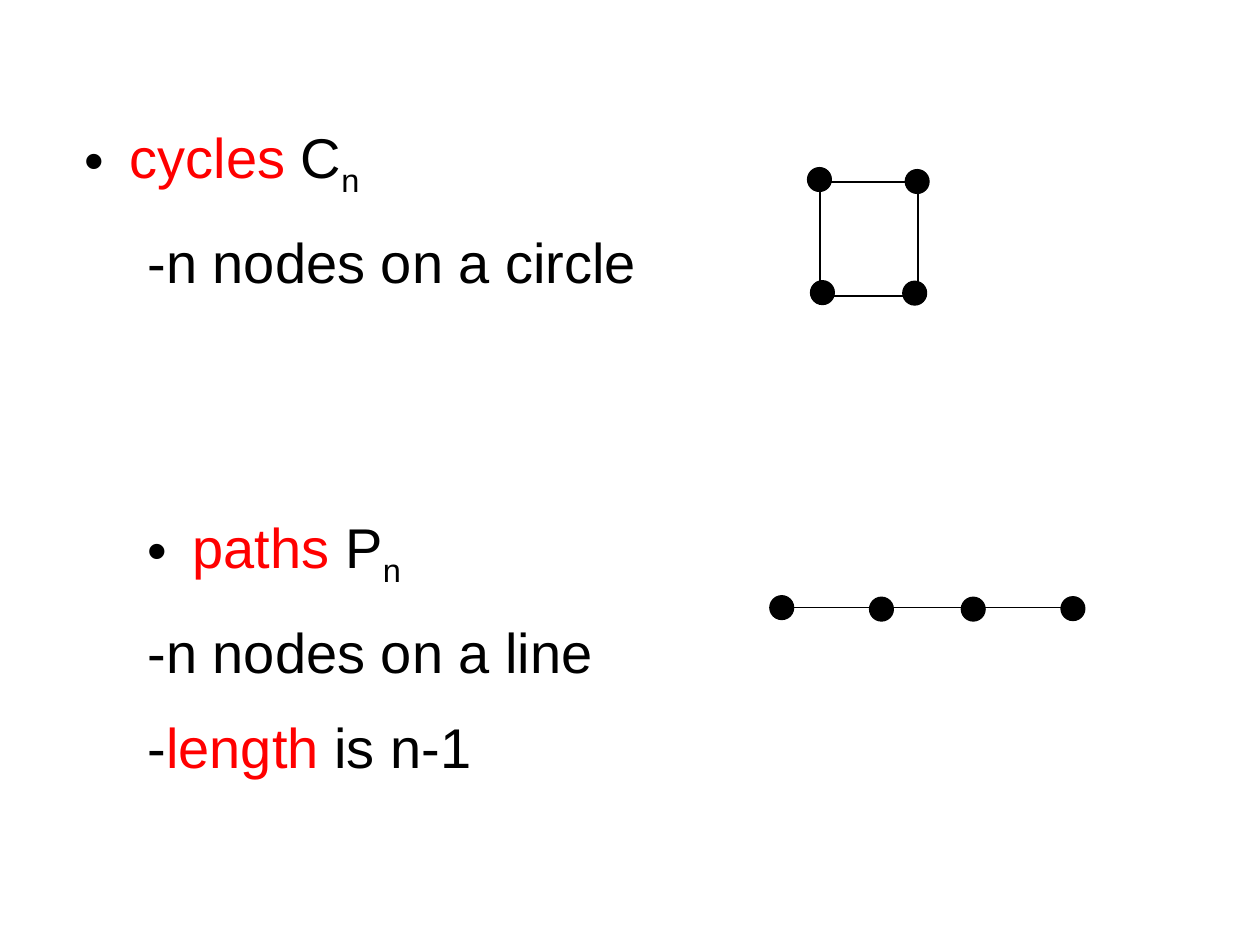
"""Build a slide that introduces cycle and path graphs."""
from typing import NamedTuple

from lxml import etree
from pptx import Presentation, util as u
from pptx.dml.color import RGBColor
from pptx.enum import shapes, text
from pptx.oxml.ns import qn

BLACK = RGBColor(0, 0, 0)
RED = RGBColor(255, 0, 0)
LINE_WIDTH = u.Pt(0.75)
NODE_SIZE = u.Cm(0.48)
HANGING = 0.91
GAP = 16


class Run(NamedTuple):
    text: str
    color: RGBColor = BLACK
    subscript: bool = False


class Item(NamedTuple):
    runs: list[Run]
    bullet: bool = False
    left: float = 1.27
    before: float = GAP


class Node(NamedTuple):
    left: float
    top: float


ITEMS = [
    Item([Run("cycles", RED), Run(" C"), Run("n", subscript=True)], True, 0, 0),
    Item([Run("-n nodes on a circle")]),
    Item([Run("paths ", RED), Run("P"), Run("n", subscript=True)], True, before=125),
    Item([Run("-n nodes on a line")]),
    Item([Run("-"), Run("length", RED), Run(" is n-1")]),
]
CYCLE_NODES = [Node(16.28, 3.38), Node(18.25, 3.42), Node(18.2, 5.67), Node(16.34, 5.66)]
PATH_NODES = [Node(15.52, 12.01), Node(17.53, 12.04), Node(19.38, 12.04), Node(21.39, 12.03)]


def add_item(p, item: Item) -> None:
    """Write one list item with its indent and run formats."""
    p.space_before = u.Pt(item.before)
    p.line_spacing = 1.0
    hanging = HANGING if item.bullet else 0
    pPr = p._p.get_or_add_pPr()
    pPr.set("marL", str(u.Cm(item.left + hanging)))
    pPr.set("indent", str(u.Cm(-hanging)))
    if item.bullet:
        color = etree.SubElement(etree.SubElement(pPr, qn("a:buClr")), qn("a:srgbClr"))
        color.set("val", str(BLACK))
        etree.SubElement(pPr, qn("a:buChar")).set("char", "•")
    else:
        etree.SubElement(pPr, qn("a:buNone"))
    for run in item.runs:
        r = p.add_run()
        r.text = run.text
        r.font.name = "Arial"
        r.font.size = u.Pt(32)
        r.font.color.rgb = run.color
        if run.subscript:
            r.font._element.set("baseline", "-25000")


def add_node(s, node: Node) -> None:
    """Draw one filled graph node."""
    sp = s.shapes.add_shape(
        shapes.MSO_SHAPE.OVAL, u.Cm(node.left), u.Cm(node.top), NODE_SIZE, NODE_SIZE)
    sp.shadow.inherit = False
    sp.fill.solid()
    sp.fill.fore_color.rgb = BLACK
    sp.line.color.rgb = BLACK
    sp.line.width = LINE_WIDTH


def add_cycle(s) -> None:
    """Draw the cycle with four nodes."""
    sp = s.shapes.add_shape(
        shapes.MSO_SHAPE.RECTANGLE, u.Cm(16.53), u.Cm(3.67), u.Cm(1.98), u.Cm(2.3))
    sp.shadow.inherit = False
    sp.fill.background()
    sp.line.color.rgb = BLACK
    sp.line.width = LINE_WIDTH
    for node in CYCLE_NODES:
        add_node(s, node)


def add_path(s) -> None:
    """Draw the path with four nodes."""
    y = u.Cm(12.25)
    line = s.shapes.add_connector(
        shapes.MSO_CONNECTOR.STRAIGHT, u.Cm(15.77), y, u.Cm(21.64), y)
    line.line.color.rgb = BLACK
    line.line.width = LINE_WIDTH
    etree.SubElement(line._element.spPr, qn("a:effectLst"))
    for node in PATH_NODES:
        add_node(s, node)


def add_list(s) -> None:
    """Fill the body placeholder with the list."""
    body = s.placeholders[1]
    body.left, body.top = u.Cm(1.45), u.Cm(2.34)
    body.width, body.height = u.Cm(12.75), u.Cm(15.85)
    tf = body.text_frame
    tf.word_wrap = True
    tf.auto_size = text.MSO_AUTO_SIZE.NONE
    tf.vertical_anchor = text.MSO_ANCHOR.TOP
    tf.margin_top = u.Cm(0.13)
    for i, item in enumerate(ITEMS):
        add_item(tf.add_paragraph() if i else tf.paragraphs[0], item)


def main() -> None:
    """Build and save the presentation."""
    prs = Presentation()
    prs.slide_width, prs.slide_height = u.Cm(25.4), u.Cm(19.05)
    s = prs.slides.add_slide(prs.slide_layouts[1])
    title = s.shapes.title._element
    title.getparent().remove(title)
    add_list(s)
    add_cycle(s)
    add_path(s)
    prs.save("out.pptx")


if __name__ == "__main__":
    main()
